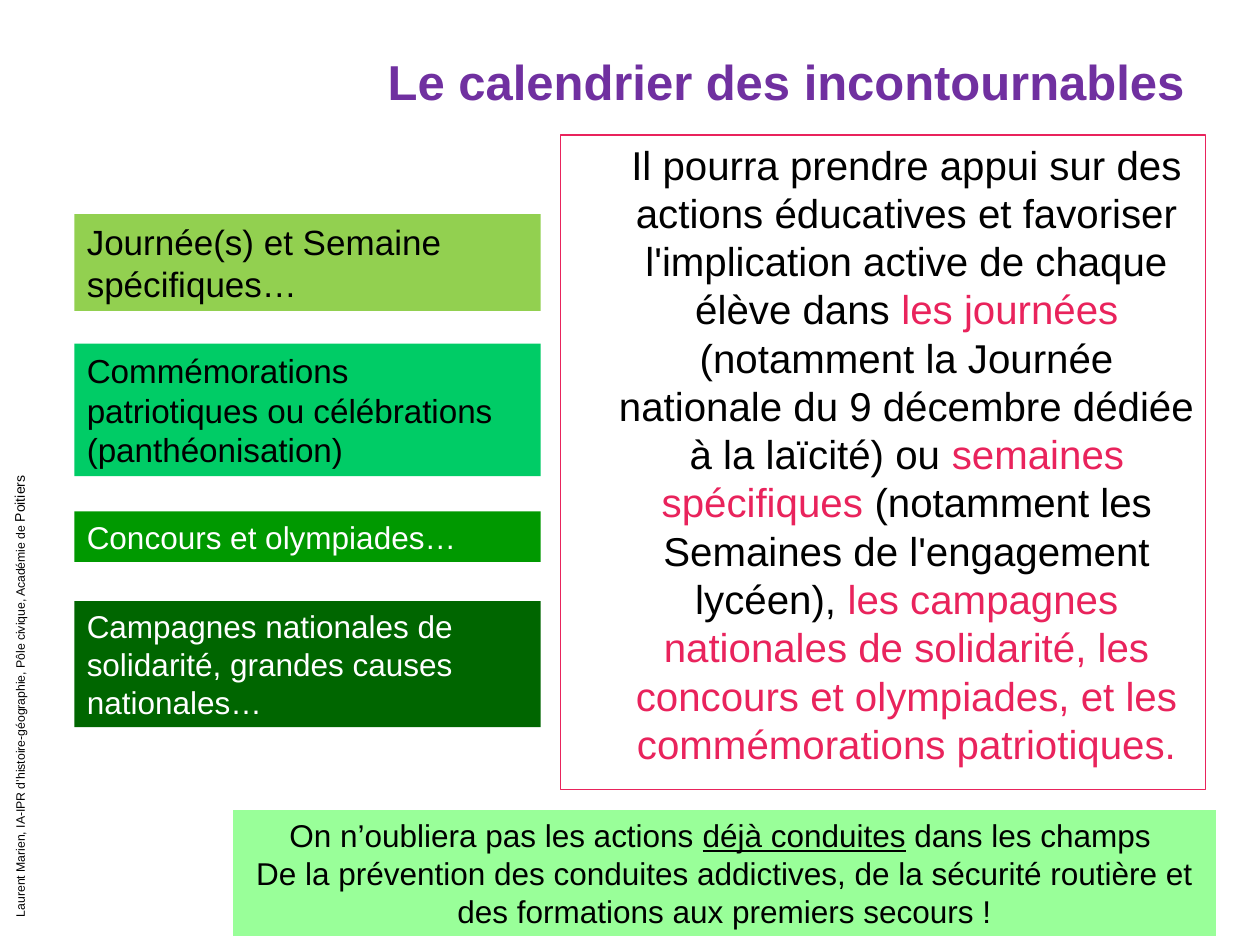
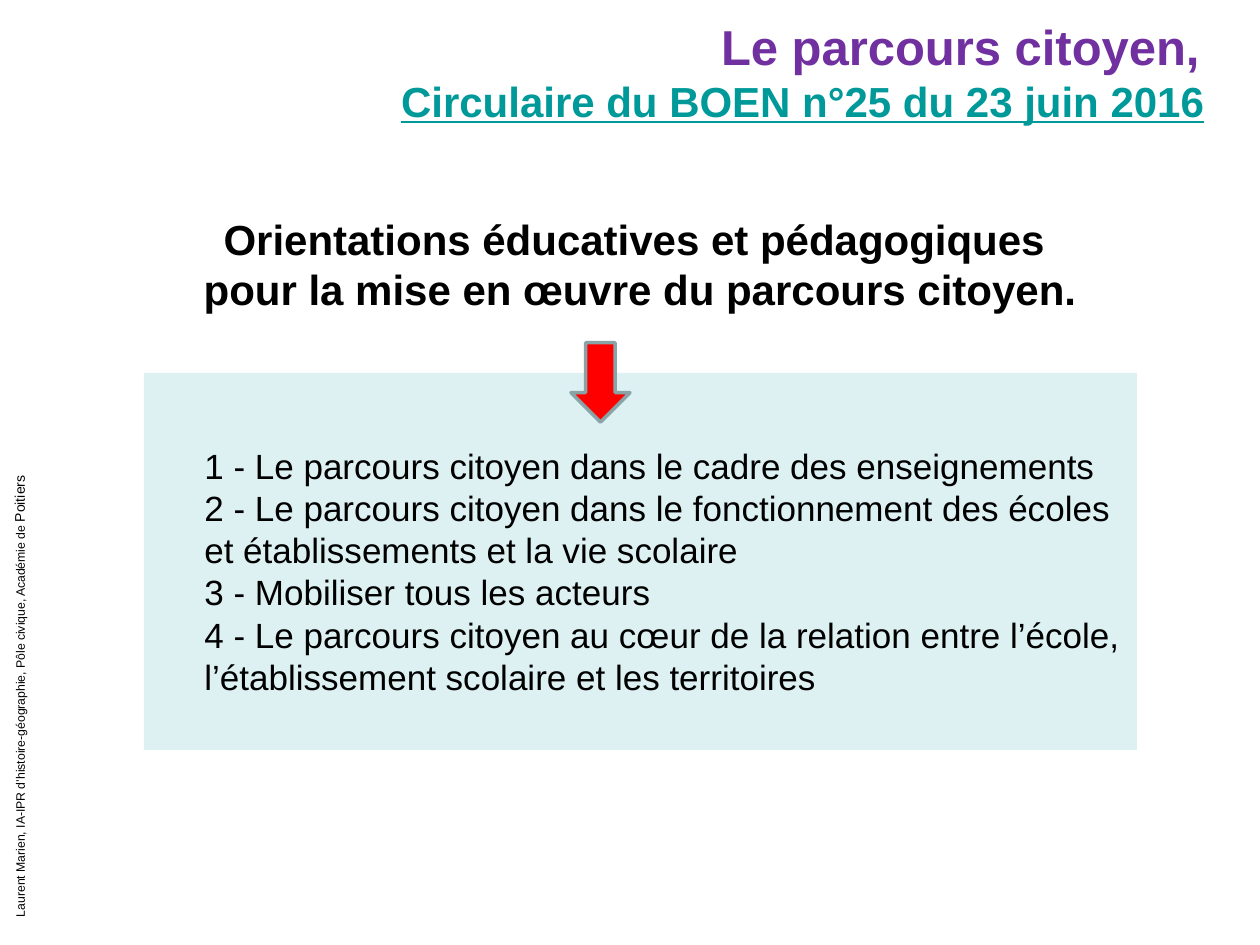
from pptx import Presentation
from pptx.dml.color import RGBColor
from pptx.enum.shapes import MSO_SHAPE as Shape
from pptx.enum.text import MSO_ANCHOR as Anchor, MSO_AUTO_SIZE as AutoSize, PP_ALIGN as Align
from pptx.util import Cm, Pt

FONT = "Arial"
TITLE_ONLY = 5
COLOURS = {
    "title": "7030A0", "text": "000000", "light": "FFFFFF", "accent": "E9235C",
    "reference": "009999", "days": "92D050", "tributes": "00CC66",
    "contests": "009900", "campaigns": "006600", "reminder": "99FF99",
    "panel": "DDF1F3", "arrow": "FF0000", "arrow_edge": "89A4A7",
}


def rgb(name):
    return RGBColor.from_string(COLOURS[name])


def write(shape, paragraphs, size, colour="text", align=Align.LEFT, **frame_format):
    """Fill a shape with paragraphs, each a list of (text, font overrides) runs."""
    frame = shape.text_frame
    settings = {"word_wrap": True, "auto_size": AutoSize.NONE,
                "vertical_anchor": Anchor.TOP, **frame_format}
    for name, value in settings.items():
        setattr(frame, name, value)
    for index, runs in enumerate(paragraphs):
        paragraph = frame.paragraphs[0] if index == 0 else frame.add_paragraph()
        paragraph.alignment = align
        for text, overrides in runs:
            run = paragraph.add_run()
            run.text = text
            look = {"name": FONT, "size": size, "colour": colour, **overrides}
            run.font.color.rgb = rgb(look.pop("colour"))
            look["size"] = Pt(look["size"])
            for name, value in look.items():
                setattr(run.font, name, value)


def add_panel(slide, box, fill=None, line=None, line_width=0.75, kind=Shape.RECTANGLE):
    panel = slide.shapes.add_shape(kind, *map(Cm, box))
    panel.shadow.inherit = False
    if fill:
        panel.fill.solid()
        panel.fill.fore_color.rgb = rgb(fill)
    else:
        panel.fill.background()
    if line:
        panel.line.color.rgb = rgb(line)
        panel.line.width = Pt(line_width)
    else:
        panel.line.fill.background()
    return panel


def add_title(slide, box, paragraphs):
    title = slide.shapes.title
    for name, value in zip(("left", "top", "width", "height"), box):
        setattr(title, name, Cm(value))
    write(title, paragraphs, 28, "title", Align.RIGHT, vertical_anchor=Anchor.MIDDLE)


def add_credit(slide):
    """Author line running up the left edge."""
    credit = slide.shapes.add_textbox(Cm(-6.6), Cm(11.43), Cm(14), Cm(0.61))
    credit.rotation = 270
    write(credit, [[
        ("Laurent Marien, IA-IPR d’histoire-géographie, Pôle civique, Académie de ", {}),
        ("Poitiers", {"size": 8}),
    ]], 7)


def add_themes(slide, box):
    left, top, width, _ = box
    themes = [
        (0, 1.95, "days", "text", 20, "Journée(s) et Semaine spécifiques…"),
        (2.61, 2.67, "tributes", "text", 19,
         "Commémorations patriotiques ou célébrations (panthéonisation)"),
        (5.99, 1.02, "contests", "light", 18, "Concours et olympiades…"),
        (7.8, 2.54, "campaigns", "light", 18,
         "Campagnes nationales de solidarité, grandes causes nationales…"),
    ]
    for offset, height, fill, colour, size, label in themes:
        theme = add_panel(slide, (left, top + offset, width, height), fill)
        write(theme, [[(label, {})]], size, colour)


def add_quotation(slide, box):
    accent = {"colour": "accent"}
    write(add_panel(slide, box, line="accent"), [[
        ("Il pourra prendre appui sur des actions éducatives et favoriser "
         "l'implication active de chaque élève dans ", {}),
        ("les journées ", accent),
        ("(notamment la Journée nationale du 9 décembre dédiée à la laïcité) ou ", {}),
        ("semaines spécifiques ", accent),
        ("(notamment les Semaines de l'engagement lycéen), ", {}),
        ("les campagnes nationales de solidarité, les concours et olympiades, "
         "et les commémorations patriotiques.", accent),
    ]], 23, align=Align.CENTER, margin_left=Cm(1.07), margin_right=Cm(0.1),
        margin_top=Cm(0.1), margin_bottom=Cm(0.1))


def add_reminder(slide, box):
    write(add_panel(slide, box, "reminder"), [
        [("On n’oubliera pas les actions ", {}),
         ("déjà conduites", {"underline": True}),
         (" dans les champs ", {})],
        [("De la prévention des conduites addictives, de la sécurité routière et "
          "des formations aux premiers secours !", {})],
    ], 18, align=Align.CENTER)


def add_orientations(slide, box):
    """Heading, list panel and the arrow that leads from one to the other."""
    left, top, width, height = box
    heading = slide.shapes.add_textbox(
        Cm(left + 0.81), Cm(top), Cm(width - 1.63), Cm(3.05))
    write(heading, [
        [("Orientations éducatives et pédagogiques ", {"bold": True})],
        [("pour la mise en œuvre du parcours citoyen.", {"bold": True})],
    ], 24, align=Align.CENTER)

    panel_top = 3.35
    panel = add_panel(slide, (left, top + panel_top, width, height - panel_top), "panel")
    orientations = [
        "Le parcours citoyen dans le cadre des enseignements",
        "Le parcours citoyen dans le fonctionnement des écoles et établissements "
        "et la vie scolaire",
        "Mobiliser tous les acteurs",
        "Le parcours citoyen au cœur de la relation entre l’école, "
        "l’établissement scolaire et les territoires",
    ]
    write(panel, [[(f"{number} - {label}", {})]
                  for number, label in enumerate(orientations, 1)],
          20, margin_left=Cm(1.22), margin_top=Cm(1.45))

    add_panel(slide, (left + 8.61, top + 2.74, 1.19, 1.6), "arrow", "arrow_edge", 2,
              Shape.DOWN_ARROW)


def build_calendar(slide):
    add_title(slide, (1.27, 0.76, 22.86, 1.75),
              [[("Le calendrier des incontournables", {"bold": True})]])
    add_quotation(slide, (11.3, 2.72, 13, 13.2))
    add_themes(slide, (1.5, 4.32, 9.4, 10.34))
    add_reminder(slide, (4.7, 16.33, 19.81, 2.54))


def build_citizen_path(slide):
    add_title(slide, (1.85, 0.33, 22.86, 2.21), [
        [("Le parcours citoyen, ", {"bold": True})],
        [("Circulaire du BOEN n°25 du 23 juin 2016",
          {"size": 24, "colour": "reference", "bold": True, "underline": True}),
         (" ", {"size": 18, "bold": False})],
    ])
    add_orientations(slide, (2.9, 4.17, 20.02, 10.95))


def main():
    deck = Presentation()
    deck.slide_width, deck.slide_height = Cm(25.4), Cm(19.05)
    for build in (build_calendar, build_citizen_path):
        slide = deck.slides.add_slide(deck.slide_layouts[TITLE_ONLY])
        build(slide)
        add_credit(slide)
    deck.save("out.pptx")


if __name__ == "__main__":
    main()
